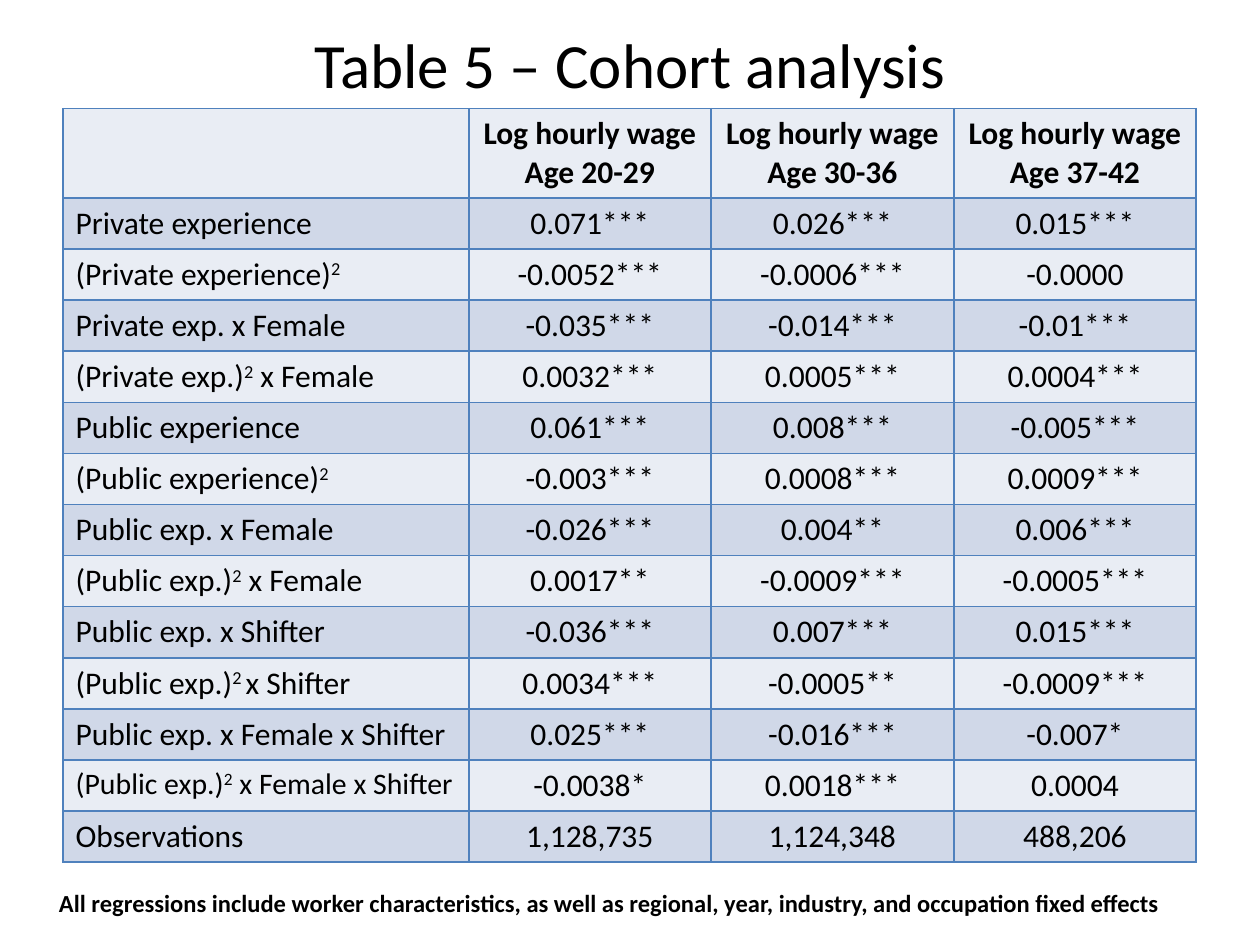
from lxml.etree import SubElement
from pptx import Presentation
from pptx.dml.color import RGBColor
from pptx.enum.text import MSO_ANCHOR as Anchor, PP_ALIGN as Align
from pptx.oxml.ns import qn
from pptx.util import Cm, Pt

BLACK = RGBColor(0x00, 0x00, 0x00)
PALE = RGBColor(0xE9, 0xED, 0xF4)
BAND = RGBColor(0xD0, 0xD8, 0xE8)
EDGE = RGBColor(0x4F, 0x81, 0xBD)

TITLE = "Table 5 – Cohort analysis"
NOTE = ("All regressions include worker characteristics, as well as regional, "
        "year, industry, and occupation fixed effects")
HEAD = ["", "Log hourly wage\nAge 20-29", "Log hourly wage\nAge 30-36",
        "Log hourly wage\nAge 37-42"]
# Text between two carets is superscript.
ROWS = [
    ["Private experience", "0.071***", "0.026***", "0.015***"],
    ["(Private experience)^2^", "-0.0052***", "-0.0006***", "-0.0000"],
    ["Private exp. x Female", "-0.035***", "-0.014***", "-0.01***"],
    ["(Private exp.)^2^ x Female", "0.0032***", "0.0005***", "0.0004***"],
    ["Public experience", "0.061***", "0.008***", "-0.005***"],
    ["(Public experience)^2^", "-0.003***", "0.0008***", "0.0009***"],
    ["Public exp. x Female", "-0.026***", "0.004**", "0.006***"],
    ["(Public exp.)^2^ x Female", "0.0017**", "-0.0009***", "-0.0005***"],
    ["Public exp. x Shifter", "-0.036***", "0.007***", "0.015***"],
    ["(Public exp.)^2 ^x Shifter", "0.0034***", "-0.0005**", "-0.0009***"],
    ["Public exp. x Female x Shifter", "0.025***", "-0.016***", "-0.007*"],
    ["(Public exp.)^2^ x Female x Shifter", "-0.0038*", "0.0018***", "0.0004"],
    ["Observations", "1,128,735", "1,124,348", "488,206"],
]
WIDTHS = [8.18, 4.88, 4.9, 4.88]
HEAD_H, ROW_H = 1.8, 1.03
LONG = 34  # labels longer than this are set one point smaller


def write(frame, text, size=18, bold=False, align=Align.LEFT):
    """Fill a text frame: one paragraph a line, superscript between carets."""
    for i, line in enumerate(text.split("\n")):
        para = frame.add_paragraph() if i else frame.paragraphs[0]
        para.alignment = align
        for j, part in enumerate(line.split("^")):
            if not part:
                continue
            run = para.add_run()
            run.text = part
            font = run.font
            font.name, font.size, font.bold = "Calibri", Pt(size), bold
            font.color.rgb = BLACK
            if j % 2:
                font._element.set("baseline", "30000")


def add_box(slide, text, left, top, width, height, anchor=Anchor.TOP, **style):
    box = slide.shapes.add_textbox(Cm(left), Cm(top), Cm(width), Cm(height))
    frame = box.text_frame
    frame.word_wrap = True
    frame.vertical_anchor = anchor
    write(frame, text, **style)


def paint(cell, color):
    """Give a cell its four borders, then its fill."""
    props = cell._tc.get_or_add_tcPr()
    for side in ("lnL", "lnR", "lnT", "lnB"):
        line = SubElement(props, qn(f"a:{side}"), w=str(Pt(1)))
        fill = SubElement(line, qn("a:solidFill"))
        SubElement(fill, qn("a:srgbClr"), val=str(EDGE))
    cell.fill.solid()
    cell.fill.fore_color.rgb = color


def add_grid(slide, left, top):
    rows = [HEAD] + ROWS
    heights = [HEAD_H] + [ROW_H] * len(ROWS)
    table = slide.shapes.add_table(
        len(rows), len(HEAD), Cm(left), Cm(top),
        Cm(sum(WIDTHS)), Cm(sum(heights))).table
    for col, width in zip(table.columns, WIDTHS):
        col.width = Cm(width)
    for r, (row, height) in enumerate(zip(rows, heights)):
        table.rows[r].height = Cm(height)
        for c, text in enumerate(row):
            cell = table.cell(r, c)
            paint(cell, BAND if r % 2 else PALE)
            write(cell.text_frame, text, size=17 if len(text) > LONG else 18,
                  bold=r == 0, align=Align.CENTER if c else Align.LEFT)


def main():
    deck = Presentation()
    deck.slide_width, deck.slide_height = Cm(25.4), Cm(19.05)
    slide = deck.slides.add_slide(deck.slide_layouts[6])
    add_box(slide, TITLE, 1.27, 0.48, 22.86, 1.58, anchor=Anchor.MIDDLE,
            size=36, align=Align.CENTER)
    add_grid(slide, 1.27, 2.19)
    add_box(slide, NOTE, 0.94, 17.78, 23.2, 0.86, size=14, bold=True)
    deck.save("out.pptx")


if __name__ == "__main__":
    main()
